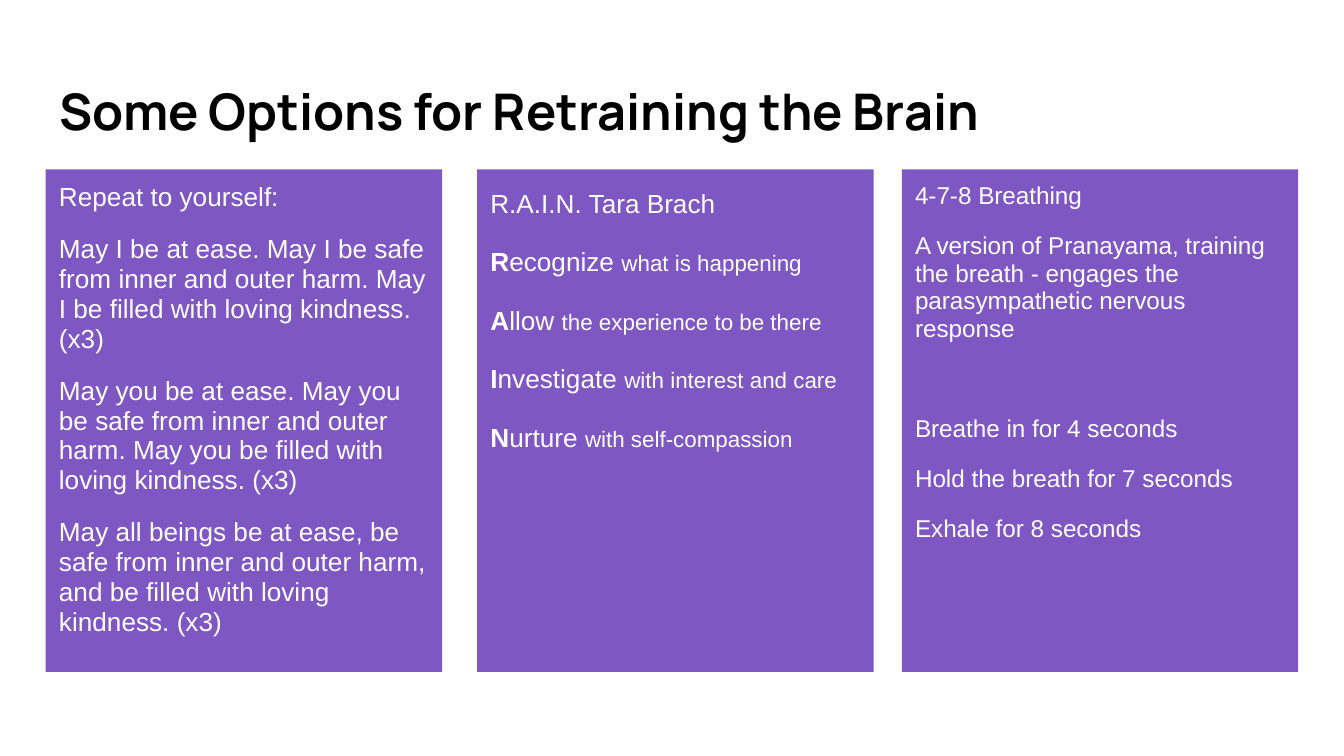
from pptx import Presentation
from pptx.dml.color import RGBColor
from pptx.enum.shapes import MSO_SHAPE as Shape
from pptx.enum.text import MSO_ANCHOR as Anchor, MSO_AUTO_SIZE as AutoSize, PP_ALIGN as Align
from pptx.util import Inches, Pt

PURPLE = RGBColor(0x7E, 0x57, 0xC2)
WHITE = RGBColor(0xFF, 0xFF, 0xFF)
BLACK = RGBColor(0x00, 0x00, 0x00)

PAGE_WIDTH = Inches(10)
PAGE_HEIGHT = PAGE_WIDTH * 9 // 16
GAP = Pt(12)
BLANK_LINE_GAP = Pt(38.8)
TITLE_FONT = {"name": "Manrope", "size": Pt(27), "bold": True}
BODY_FONT = {"name": "Arial", "size": Pt(14), "bold": False}
INITIAL_FONT = {**BODY_FONT, "bold": True}
DETAIL_FONT = {**BODY_FONT, "size": Pt(12)}
BREATHING_FONT = {**BODY_FONT, "size": Pt(12.95)}

KINDNESS = [
    "Repeat to yourself:",
    "May I be at ease. May I be safe from inner and outer harm. "
    "May I be filled with loving kindness. (x3)",
    "May you be at ease. May you be safe from inner and outer harm. "
    "May you be filled with loving kindness. (x3)",
    "May all beings be at ease, be safe from inner and outer harm, "
    "and be filled with loving kindness. (x3)",
]
RAIN_HEADING = "R.A.I.N. Tara Brach"
RAIN_STEPS = [
    ("Recognize ", "what is happening"),
    ("Allow ", "the experience to be there"),
    ("Investigate ", "with interest and care"),
    ("Nurture ", "with self-compassion"),
]
BREATHING = [
    "4-7-8 Breathing",
    "A version of Pranayama, training the breath - engages the "
    "parasympathetic nervous response",
]
BREATHING_STEPS = [
    "Breathe in for 4 seconds",
    "Hold the breath for 7 seconds",
    "Exhale for 8 seconds",
]


def set_format(target, values):
    for name, value in values.items():
        setattr(target, name, value)


def format_frame(frame, anchor):
    set_format(frame, {
        "word_wrap": True, "auto_size": AutoSize.NONE, "vertical_anchor": anchor,
        "margin_left": Inches(0.1), "margin_right": Inches(0.1),
        "margin_top": Inches(0.1), "margin_bottom": Inches(0.1),
    })


def add_span(para, text, font, color):
    span = para.add_run()
    span.text = text
    set_format(span.font, font)
    span.font.color.rgb = color


def add_title(page, text):
    title = page.shapes.title
    set_format(title, {
        "left": Inches(0.34), "top": Inches(0.48),
        "width": Inches(9.32), "height": Inches(0.68),
    })
    format_frame(title.text_frame, Anchor.MIDDLE)
    para = title.text_frame.paragraphs[0]
    para.alignment = Align.LEFT
    add_span(para, text, TITLE_FONT, BLACK)


def add_card(page, left, paragraphs, line_spacing):
    box = page.shapes.add_shape(
        Shape.RECTANGLE, Inches(left), Inches(1.26), Inches(2.95), Inches(3.74))
    box.shadow.inherit = False
    box.fill.solid()
    box.fill.fore_color.rgb = PURPLE
    box.line.fill.background()
    frame = box.text_frame
    format_frame(frame, Anchor.TOP)
    for index, (space_before, spans) in enumerate(paragraphs):
        para = frame.add_paragraph() if index else frame.paragraphs[0]
        set_format(para, {
            "alignment": Align.LEFT, "line_spacing": line_spacing,
            "space_before": space_before if index else Pt(0),
        })
        for text, font in spans:
            add_span(para, text, font, WHITE)


def plain_paragraphs(texts, font, first_gap=GAP):
    return [(GAP if index else first_gap, [(text, font)])
            for index, text in enumerate(texts)]


def step_paragraph(word, detail):
    return GAP, [(word[0], INITIAL_FONT), (word[1:], BODY_FONT), (detail, DETAIL_FONT)]


def main():
    deck = Presentation()
    set_format(deck, {"slide_width": PAGE_WIDTH, "slide_height": PAGE_HEIGHT})
    page = deck.slides.add_slide(deck.slide_layouts.get_by_name("Title Only"))
    add_title(page, "Some Options for Retraining the Brain")

    rain = plain_paragraphs([RAIN_HEADING], BODY_FONT)
    rain += [step_paragraph(word, detail) for word, detail in RAIN_STEPS]
    breathing = plain_paragraphs(BREATHING, BREATHING_FONT)
    breathing += plain_paragraphs(BREATHING_STEPS, BREATHING_FONT, BLANK_LINE_GAP)

    add_card(page, 0.34, plain_paragraphs(KINDNESS, BODY_FONT), 0.95)
    add_card(page, 3.55, rain, 1.15)
    add_card(page, 6.71, breathing, 0.95)
    deck.save("out.pptx")


if __name__ == "__main__":
    main()
